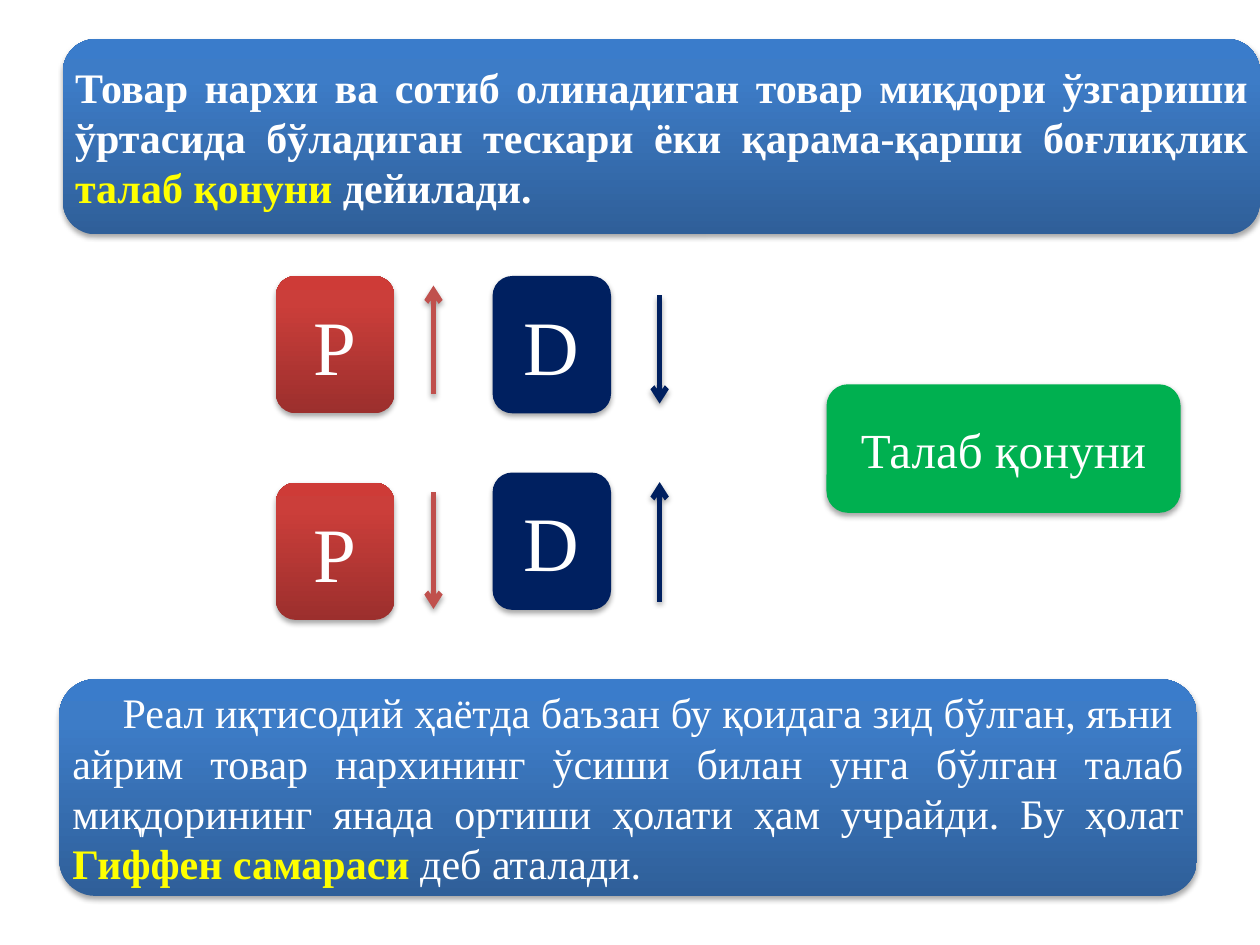
from lxml.etree import SubElement
from copy import deepcopy
from pptx import Presentation
from pptx.dml.color import RGBColor
from pptx.enum.shapes import MSO_CONNECTOR, MSO_SHAPE
from pptx.enum.text import MSO_ANCHOR, PP_ALIGN
from pptx.oxml.ns import qn
from pptx.util import Inches, Pt

FONT = "Times New Roman"
COLORS = {"white": "FFFFFF", "yellow": "FFFF00", "red": "C0504D",
          "navy": "002060", "green": "00B050", "black": "000000"}
BLUE_FADE = ((0, "2F5F99"), (0.8, "3D7CC7"), (1, "3A7CCB"))
RED_FADE = ((0, "9C2F2D"), (0.8, "CB3E3A"), (1, "CE3B37"))


def grid(*units):
    """Turn units of a 100 by 75 grid over the slide into lengths."""
    return [Inches(unit / 10) for unit in units]


def color(name):
    return RGBColor.from_string(COLORS[name])


def add_shadow(properties):
    """Give a shape or connector a soft shadow just below it."""
    effects = properties.find(qn("a:effectLst"))
    if effects is None:
        effects = SubElement(properties, qn("a:effectLst"))
    shadow = SubElement(effects, qn("a:outerShdw"), blurRad="40000", dist="23000",
                        dir="5400000", rotWithShape="0")
    tint = SubElement(shadow, qn("a:srgbClr"), val=COLORS["black"])
    SubElement(tint, qn("a:alpha"), val="35000")


def fill_fade(fill, fade):
    """Fill from bottom to top with three colour stops."""
    fill.gradient()
    fill.gradient_angle = 90
    last = fill.gradient_stops[-1]
    stop_list = fill._fill._gradFill.gsLst
    stop_list.append(deepcopy(stop_list[-1]))
    for stop, (position, value) in zip(fill.gradient_stops, fade):
        stop.position = position
        stop.color.rgb = RGBColor.from_string(value)


def add_card(page, box, paint, spans, size, align=PP_ALIGN.CENTER):
    """Add a rounded card; spans are (text, colour name, bold)."""
    card = page.shapes.add_shape(MSO_SHAPE.ROUNDED_RECTANGLE, *grid(*box))
    if isinstance(paint, str):
        card.fill.solid()
        card.fill.fore_color.rgb = color(paint)
    else:
        fill_fade(card.fill, paint)
    card.line.fill.background()
    card.shadow.inherit = False
    add_shadow(card._element.spPr)
    frame = card.text_frame
    frame.word_wrap = True
    frame.vertical_anchor = MSO_ANCHOR.MIDDLE
    para = frame.paragraphs[0]
    para.alignment = align
    para.font.name, para.font.size = FONT, Pt(size)
    for text, name, bold in spans:
        span = para.add_run()
        span.text = text
        span.font.name, span.font.size = FONT, Pt(size)
        span.font.color.rgb = color(name)
        span.font.bold = bold
    return card


def add_statement(page, box, spans, indent=0):
    card = add_card(page, box, BLUE_FADE, spans, 24, PP_ALIGN.JUSTIFY)
    frame = card.text_frame
    frame.margin_left = frame.margin_right = Inches(0.02)
    frame.margin_top = frame.margin_bottom = Inches(0.02)
    properties = frame.paragraphs[0]._p.get_or_add_pPr()
    properties.set("marL", "0")
    properties.set("indent", str(Inches(indent)))


def add_factor(page, box, letter, paint, arrow_color, reach, start, end):
    """Add a letter tile and its arrow; reach, start and end are shares of the tile."""
    add_card(page, box, paint, [(letter, "white", False)], 44)
    left, top, width, height = box
    x = left + reach * width
    arrow = page.shapes.add_connector(
        MSO_CONNECTOR.STRAIGHT, *grid(x, top + start * height, x, top + end * height))
    arrow.line.color.rgb = color(arrow_color)
    arrow.line.width = Pt(3)
    SubElement(arrow.line._get_or_add_ln(), qn("a:tailEnd"), type="arrow")
    add_shadow(arrow._element.spPr)


def add_relations(page, box):
    """Place price and demand tiles in two rows that move in opposite ways."""
    left, top = box[:2]
    tile = (9.4, 10.9)
    price = ("Р", RED_FADE, "red", 1.33)
    demand = ("D", "navy", "navy", 1.41)
    for column, row, factor, start, end in (
            (0, 0, price, 0.86, 0.07), (17.2, 0, demand, 0.14, 0.93),
            (0, 16.4, price, 0.07, 0.92), (17.2, 15.6, demand, 0.94, 0.07)):
        add_factor(page, (left + column, top + row, *tile), *factor, start, end)


def main():
    deck = Presentation()
    deck.slide_width, deck.slide_height = grid(100, 75)
    page = deck.slides.add_slide(deck.slide_layouts[6])
    add_statement(page, (5, 3.1, 95, 15.5), [
        ("Товар нархи ва сотиб олинадиган товар миқдори ўзгариши ўртасида "
         "бўладиган тескари ёки қарама-қарши боғлиқлик ", "white", True),
        ("талаб қонуни ", "yellow", True),
        ("дейилади.", "white", True)])
    add_statement(page, (4.7, 53.9, 90.3, 17.2), [
        ("Реал иқтисодий ҳаётда баъзан бу қоидага зид бўлган, яъни  айрим товар "
         "нархининг ўсиши билан унга бўлган талаб миқдорининг янада ортиши ҳолати "
         "ҳам учрайди. Бу ҳолат ", "white", False),
        ("Гиффен самараси ", "yellow", True),
        ("деб аталади.", "white", False)], indent=0.4)
    add_relations(page, (21.9, 21.9, 30.5, 27.3))
    add_card(page, (65.6, 30.5, 28.1, 10.2), "green",
             [("Талаб қонуни", "white", False)], 28)
    deck.save("out.pptx")


if __name__ == "__main__":
    main()
